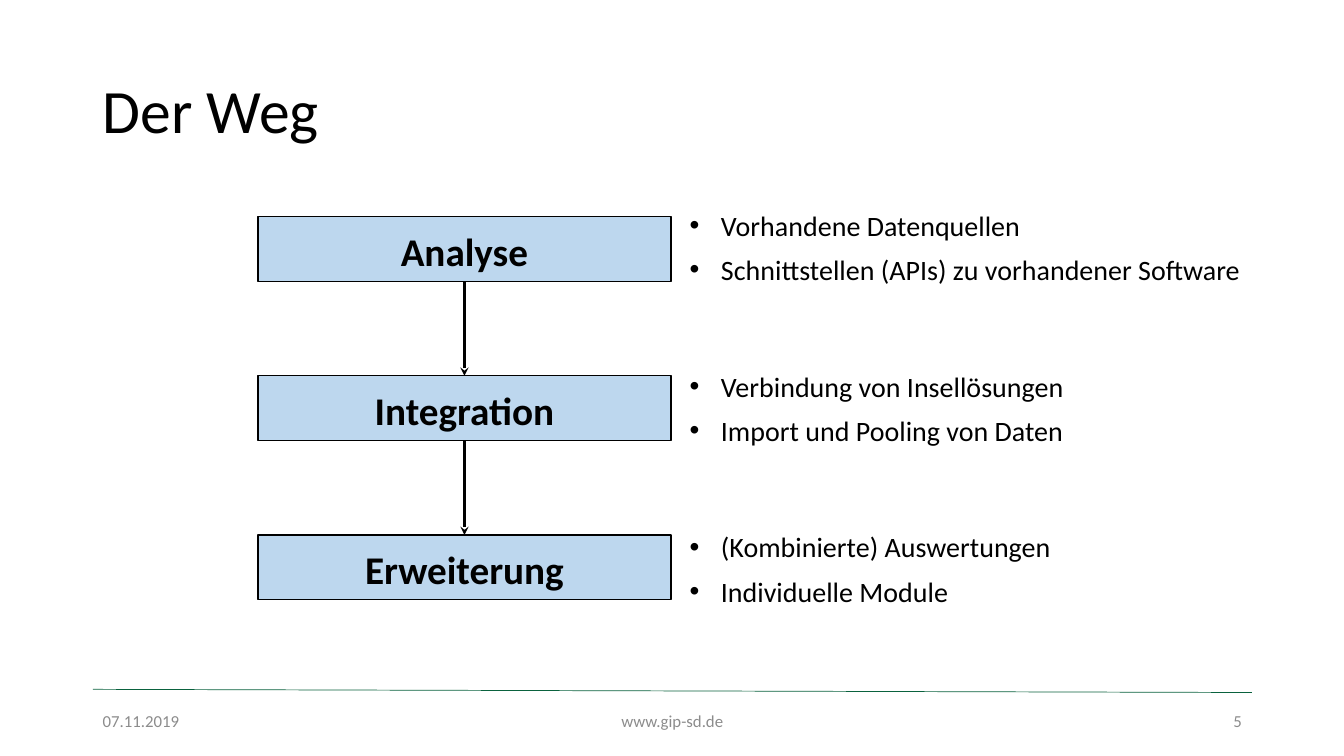
from lxml import etree
from pptx import Presentation
from pptx.dml.color import RGBColor
from pptx.enum import shapes, text
from pptx.oxml.ns import qn
from pptx.util import Cm, Pt

BLACK = RGBColor(0x00, 0x00, 0x00)
GREY = RGBColor(0x8C, 0x8C, 0x8C)
GREEN = RGBColor(0x0A, 0x62, 0x3E)
LIGHT_BLUE = RGBColor(0xBD, 0xD7, 0xEE)

LEFT, CENTER, RIGHT = text.PP_ALIGN.LEFT, text.PP_ALIGN.CENTER, text.PP_ALIGN.RIGHT
TOP, MIDDLE = text.MSO_ANCHOR.TOP, text.MSO_ANCHOR.MIDDLE

# Stage name, then its points with the width of each in cm
STAGES = [
    ("Analyse", [("Vorhandene Datenquellen", 12.27),
                 ("Schnittstellen (APIs) zu vorhandener Software", 16.13)]),
    ("Integration", [("Verbindung von Insellösungen", 14.43),
                     ("Import und Pooling von Daten", 14.43)]),
    ("Erweiterung", [("(Kombinierte) Auswertungen", 14.43),
                     ("Individuelle Module", 14.43)]),
]
STAGE_LEFT, STAGE_TOP, STAGE_WIDTH, STAGE_HEIGHT = 6.5, 5.46, 10.41, 1.63
STAGE_STEP = 4.01
POINT_LEFT, POINT_TOP, POINT_HEIGHT = 17.13, 5.13, 1.11
POINT_GROUP_STEP = 4.05


def write(shape, words, size, color=BLACK, bold=False, align=LEFT, anchor=MIDDLE,
          spacing=None, after=None, bullet=False):
    frame = shape.text_frame
    frame.word_wrap = True
    frame.vertical_anchor = anchor
    paragraph = frame.paragraphs[0]
    if bullet:
        properties = paragraph._p.get_or_add_pPr()
        properties.set("marL", str(Cm(0.79)))
        properties.set("indent", str(-Cm(0.79)))
        etree.SubElement(properties, qn("a:buFont")).set("typeface", "Arial")
        etree.SubElement(properties, qn("a:buChar")).set("char", "•")
    paragraph.alignment = align
    if spacing:
        paragraph.line_spacing = spacing
    if after:
        paragraph.space_after = Pt(after)
    run = paragraph.add_run()
    run.text = words
    run.font.name = "Calibri"
    run.font.size = Pt(size)
    run.font.bold = bold
    run.font.color.rgb = color


def add_text(slide, words, left, top, width, height, **style):
    box = slide.shapes.add_textbox(Cm(left), Cm(top), Cm(width), Cm(height))
    write(box, words, **style)
    return box


def add_line(slide, x1, y1, x2, y2, color, weight, arrow=False):
    line = slide.shapes.add_connector(
        shapes.MSO_CONNECTOR.STRAIGHT, Cm(x1), Cm(y1), Cm(x2), Cm(y2))
    line.line.color.rgb = color
    line.line.width = Pt(weight)
    if arrow:
        etree.SubElement(line.line._get_or_add_ln(), qn("a:tailEnd")).set("type", "stealth")
    etree.SubElement(line._element.spPr, qn("a:effectLst"))


def add_stage(slide, name, top):
    stage = slide.shapes.add_shape(
        shapes.MSO_SHAPE.RECTANGLE,
        Cm(STAGE_LEFT), Cm(top), Cm(STAGE_WIDTH), Cm(STAGE_HEIGHT))
    stage.shadow.inherit = False
    stage.fill.solid()
    stage.fill.fore_color.rgb = LIGHT_BLUE
    stage.line.color.rgb = BLACK
    stage.line.width = Pt(1)
    write(stage, name, size=28, bold=True, align=CENTER, spacing=1.06, after=8)


def add_points(slide, points, top):
    for row, (point, width) in enumerate(points):
        box = add_text(slide, point, POINT_LEFT, top + row * POINT_HEIGHT, width,
                       POINT_HEIGHT, size=20, anchor=TOP, bullet=True)
        box.text_frame.auto_size = text.MSO_AUTO_SIZE.SHAPE_TO_FIT_TEXT


def add_footer(slide):
    add_line(slide, 2.34, 17.37, 31.55, 17.45, GREEN, 0.5)
    for words, left, width, align in [("07.11.2019", 2.34, 7.62, LEFT),
                                      ("www.gip-sd.de", 11.23, 11.43, CENTER),
                                      ("5", 23.93, 7.62, RIGHT)]:
        add_text(slide, words, left, 17.65, width, 1.02, size=12, color=GREY, align=align)


def main():
    deck = Presentation()
    deck.slide_width, deck.slide_height = Cm(33.87), Cm(19.05)
    slide = deck.slides.add_slide(deck.slide_layouts[6])

    # Title and footer
    add_text(slide, "Der Weg", 2.34, 1.02, 29.21, 3.68, size=44, spacing=0.9)
    add_footer(slide)

    # Stages with their points, joined by arrows
    center = STAGE_LEFT + STAGE_WIDTH / 2
    for index, (name, points) in enumerate(STAGES):
        top = STAGE_TOP + index * STAGE_STEP
        add_stage(slide, name, top)
        add_points(slide, points, POINT_TOP + index * POINT_GROUP_STEP)
        if index:
            add_line(slide, center, top - STAGE_STEP + STAGE_HEIGHT, center, top,
                     BLACK, 2, arrow=True)

    deck.save("out.pptx")


if __name__ == "__main__":
    main()
